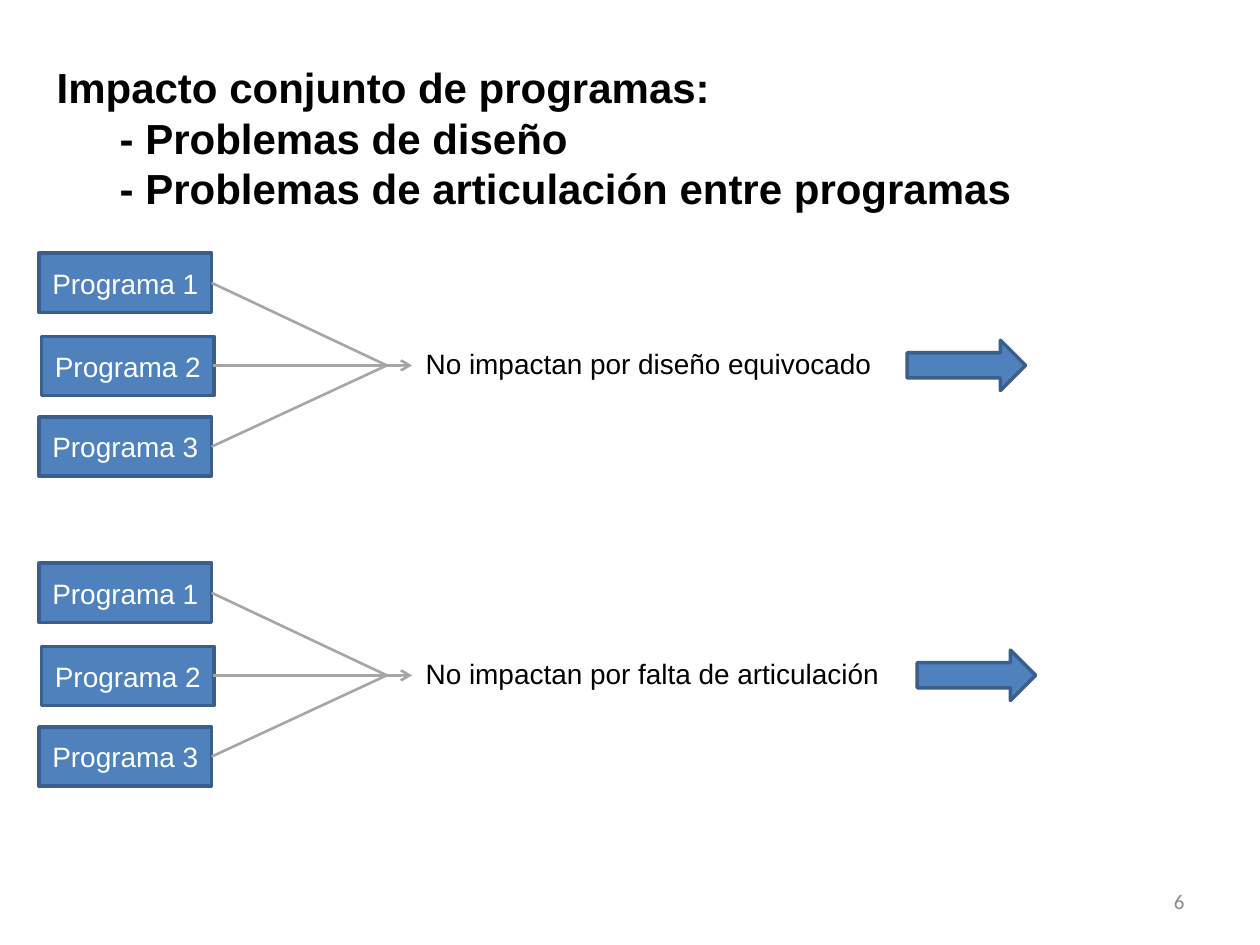
from lxml import etree
from pptx import Presentation
from pptx.dml.color import RGBColor
from pptx.enum import shapes, text
from pptx.oxml import ns
from pptx.util import Inches, Pt

BLUE = RGBColor(0x4F, 0x81, 0xBD)
DARK_BLUE = RGBColor(0x3A, 0x5F, 0x8C)
GRAY = RGBColor(0xA6, 0xA6, 0xA6)
NUMBER_GRAY = RGBColor(0x8C, 0x8C, 0x8C)
BLACK = RGBColor(0, 0, 0)
WHITE = RGBColor(0xFF, 0xFF, 0xFF)

HEADING = [
    "Impacto conjunto de programas:",
    "\t- Problemas de diseño",
    "\t- Problemas de articulación entre programas",
]
PROGRAMS = [("Programa 1", 0, 0), ("Programa 2", 0.02, 0.66), ("Programa 3", 0, 1.3)]
GROUPS = [
    (2.01, "No impactan por diseño equivocado", 6.89),
    (4.47, "No impactan por falta de articulación", 6.97),
]
PROGRAM_WIDTH, PROGRAM_HEIGHT = 1.37, 0.47


def write(frame, lines, size, color, align=text.PP_ALIGN.LEFT, font="Arial", bold=False):
    """Fill a text frame with one formatted paragraph per line."""
    frame.text = "\n".join(lines)
    for paragraph in frame.paragraphs:
        paragraph.alignment = align
        for run in paragraph.runs:
            run.font.name, run.font.size, run.font.bold = font, Pt(size), bold
            run.font.color.rgb = color


def add_block(slide, preset, left, top, width, height):
    """Add a blue outlined shape."""
    block = slide.shapes.add_shape(
        preset, Inches(left), Inches(top), Inches(width), Inches(height))
    block.shadow.inherit = False
    block.fill.solid()
    block.fill.fore_color.rgb = BLUE
    block.line.color.rgb = DARK_BLUE
    block.line.width = Pt(2)
    return block


def add_link(slide, start, end, arrow=False):
    """Add a gray line, with an open arrowhead at its end if asked."""
    link = slide.shapes.add_connector(
        shapes.MSO_CONNECTOR.STRAIGHT, *(Inches(value) for value in (*start, *end)))
    link.line.color.rgb = GRAY
    link.line.width = Pt(1.5)
    if arrow:
        etree.SubElement(link.line._get_or_add_ln(), ns.qn("a:tailEnd"), type="arrow")
    etree.SubElement(link._element.spPr, ns.qn("a:effectLst"))


def add_label(slide, left, top, width, height):
    """Add an empty wrapping text box and return its frame."""
    label = slide.shapes.add_textbox(
        Inches(left), Inches(top), Inches(width), Inches(height))
    label.text_frame.word_wrap = True
    return label.text_frame


def add_heading(slide, left, top, width, height):
    """Place the heading in the title placeholder."""
    title = slide.shapes.title
    title.left, title.top = Inches(left), Inches(top)
    title.width, title.height = Inches(width), Inches(height)
    frame = title.text_frame
    frame.vertical_anchor = text.MSO_ANCHOR.TOP
    frame.auto_size = text.MSO_AUTO_SIZE.NONE
    write(frame, HEADING, 24, BLACK, bold=True)


def add_program_group(slide, left, top, outcome, arrow_offset):
    """Draw three programs converging on their shared outcome."""
    middle = top + 0.89
    junction = (left + 2.76, middle)
    for name, dx, dy in PROGRAMS:
        program = add_block(slide, shapes.MSO_SHAPE.RECTANGLE,
                            left + dx, top + dy, PROGRAM_WIDTH, PROGRAM_HEIGHT)
        program.text_frame.word_wrap = False
        program.text_frame.vertical_anchor = text.MSO_ANCHOR.MIDDLE
        write(program.text_frame, [name], 16, WHITE, text.PP_ALIGN.CENTER)
    for _, dx, dy in PROGRAMS[::2]:
        add_link(slide, (left + dx + PROGRAM_WIDTH, top + dy + PROGRAM_HEIGHT / 2), junction)
    add_link(slide, (left + 1.38, middle), (left + 2.96, middle), arrow=True)
    write(add_label(slide, left + 2.97, middle - 0.2, 4.25, 0.37), [outcome], 16, BLACK)
    add_block(slide, shapes.MSO_SHAPE.RIGHT_ARROW,
              left + arrow_offset, middle - 0.2, 0.94, 0.4)


def add_page_number(slide, left, top, width, height):
    """Write the page number at the right of its box."""
    frame = add_label(slide, left, top, width, height)
    frame.vertical_anchor = text.MSO_ANCHOR.MIDDLE
    write(frame, ["6"], 12, NUMBER_GRAY, text.PP_ALIGN.RIGHT, "Calibri")


def main():
    """Build and save the slide."""
    deck = Presentation()
    deck.slide_width, deck.slide_height = Inches(10), Inches(7.5)
    slide = deck.slides.add_slide(deck.slide_layouts[5])
    add_heading(slide, 0.35, 0.44, 9.06, 1.31)
    for top, outcome, arrow_offset in GROUPS:
        add_program_group(slide, 0.31, top, outcome, arrow_offset)
    add_page_number(slide, 7.17, 6.95, 2.33, 0.4)
    deck.save("out.pptx")


if __name__ == "__main__":
    main()
